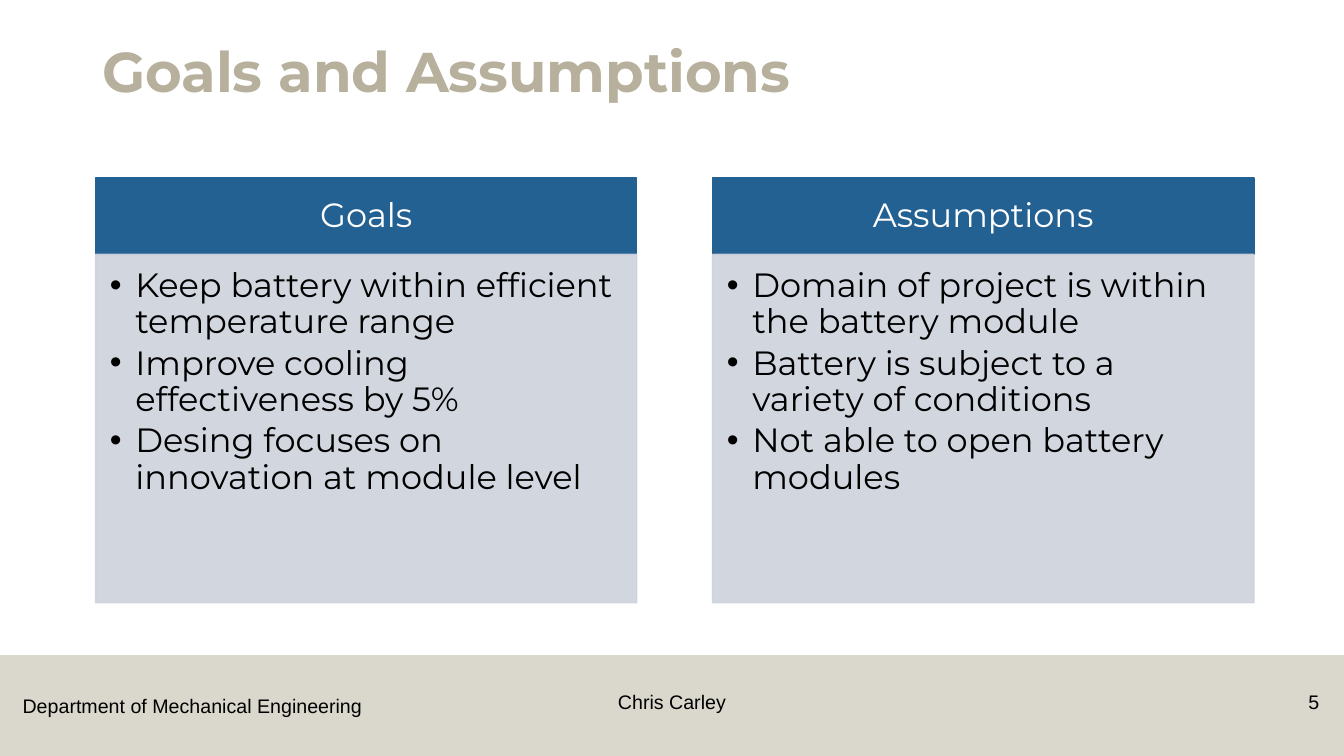
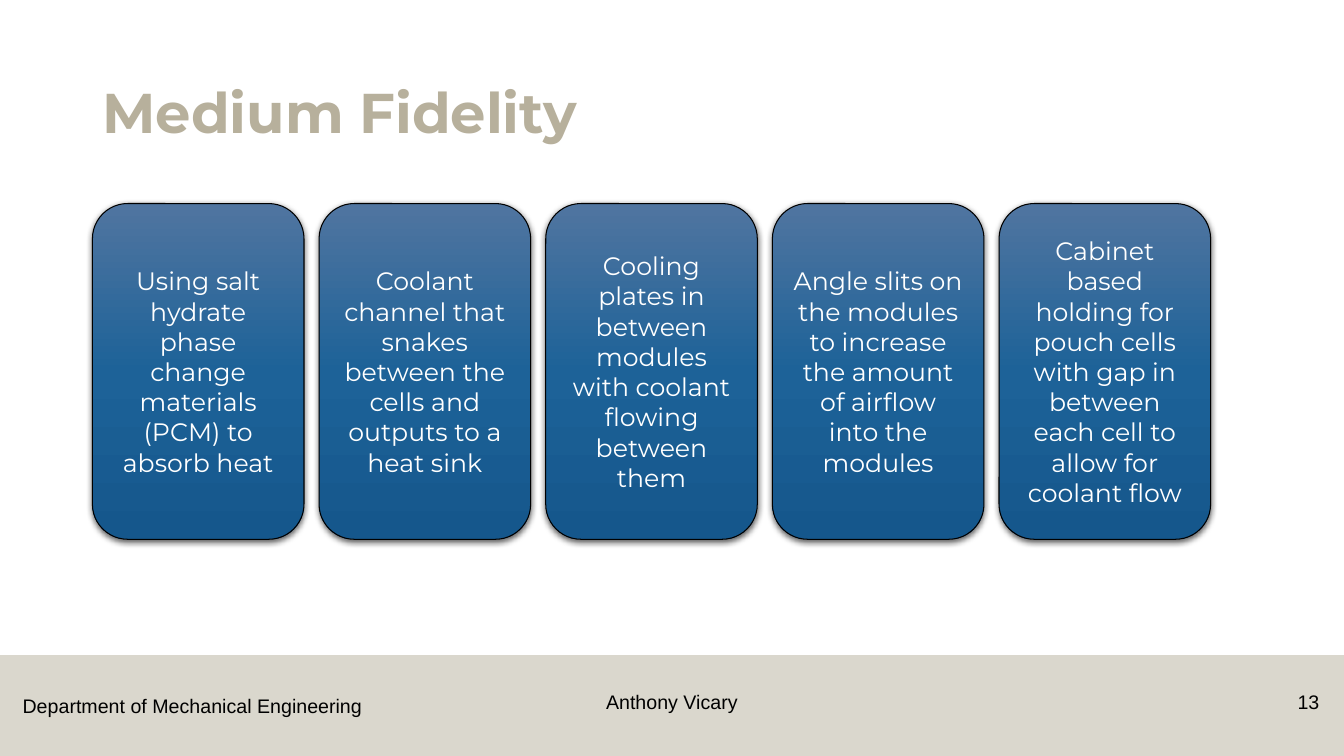
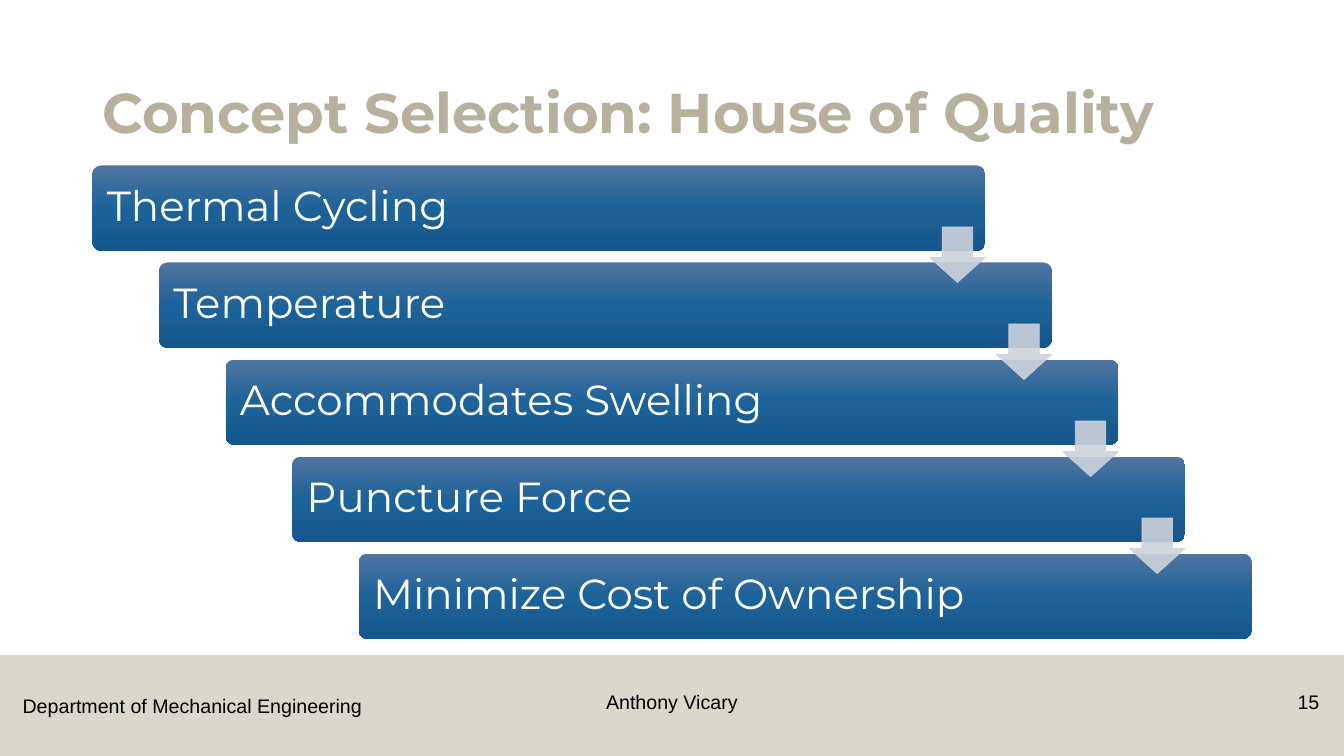
from dataclasses import dataclass
from typing import NamedTuple

from lxml.etree import SubElement
from pptx import Presentation
from pptx.dml.color import RGBColor
from pptx.enum.shapes import MSO_SHAPE as Preset
from pptx.enum.text import MSO_ANCHOR as Anchor, PP_ALIGN as Align
from pptx.oxml.ns import qn
from pptx.util import Cm, Pt


@dataclass(frozen=True)
class Theme:
    heading_font: str = "Montserrat"
    footer_font: str = "Arial"
    sand: str = "B7B09C"
    blue: str = "236192"
    mist: str = "CDD2DC"
    white: str = "FFFFFF"
    black: str = "000000"
    gradient: tuple = ((0, "5075A0"), (50, "1D6298"), (100, "15578C"))
    title_size: int = 40
    step_size: int = 30
    column_size: int = 24
    card_size: int = 18
    footer_size: int = 14


class Box(NamedTuple):
    left: float
    top: float
    width: float
    height: float

    def lengths(self):
        return [Cm(value) for value in self]


THEME = Theme()
SLIDE_WIDTH, SLIDE_HEIGHT = 33.87, 19.05
DEFAULT_INSETS = (0.25, 0.13, 0.25, 0.13)
HEADER_INSETS = (0.48, 0.28, 0.48, 0.28)
BODY_INSETS = (0.36, 0.36, 0.48, 0.53)
STEP_INSETS = (0.3, 0.3, 0.3, 0.3)


def add_bullet(paragraph, indent):
    properties = paragraph._p.get_or_add_pPr()
    properties.set("marL", str(Cm(indent)))
    properties.set("indent", str(-Cm(indent)))
    SubElement(properties, qn("a:buFont"), typeface="Arial")
    SubElement(properties, qn("a:buChar"), char="•")


def write_text(shape, *lines, size, color=THEME.black, font=THEME.heading_font,
               bold=False, align=Align.LEFT, anchor=Anchor.TOP, spacing=1.0,
               after=0, bullet_indent=None, insets=DEFAULT_INSETS, wrap=True):
    frame = shape.text_frame
    frame.word_wrap = wrap
    frame.vertical_anchor = anchor
    (frame.margin_left, frame.margin_top,
     frame.margin_right, frame.margin_bottom) = [Cm(inset) for inset in insets]
    for index, line in enumerate(lines):
        paragraph = frame.add_paragraph() if index else frame.paragraphs[0]
        paragraph.alignment = align
        paragraph.line_spacing = spacing
        paragraph.space_after = Pt(after)
        if bullet_indent:
            add_bullet(paragraph, bullet_indent)
        run = paragraph.add_run()
        run.text = line
        run.font.name = font
        run.font.size = Pt(size)
        run.font.bold = bold
        run.font.color.rgb = RGBColor.from_string(color)


def add_text(slide, box, *lines, **text_format):
    write_text(slide.shapes.add_textbox(*box.lengths()), *lines, **text_format)


def fill_gradient(shape, stops):
    shape.fill.gradient()
    shape.fill.gradient_angle = 270
    stop_list = shape._element.spPr.find(".//" + qn("a:gsLst"))
    for stop in list(stop_list):
        stop_list.remove(stop)
    for position, color in stops:
        stop = SubElement(stop_list, qn("a:gs"), pos=str(position * 1000))
        SubElement(stop, qn("a:srgbClr"), val=color)


def add_shape(slide, preset, box, fill=None, line=None, line_width=1.0,
              opacity=None, adjustments=()):
    shape = slide.shapes.add_shape(preset, *box.lengths())
    shape.shadow.inherit = False
    for index, value in enumerate(adjustments):
        shape.adjustments[index] = value
    if fill:
        shape.fill.solid()
        shape.fill.fore_color.rgb = RGBColor.from_string(fill)
    else:
        fill_gradient(shape, THEME.gradient)
    if line:
        shape.line.color.rgb = RGBColor.from_string(line)
        shape.line.width = Pt(line_width)
    else:
        shape.line.fill.background()
    if opacity:
        for color in list(shape._element.spPr.iter(qn("a:srgbClr"))):
            SubElement(color, qn("a:alpha"), val=str(opacity * 1000))
    return shape


def add_soft_shadow(shape):
    effects = shape._element.spPr.find(qn("a:effectLst"))
    shadow = SubElement(effects, qn("a:outerShdw"), blurRad=str(Pt(4.5)),
                        dist=str(Pt(1.5)), dir="5400000", rotWithShape="0")
    color = SubElement(shadow, qn("a:srgbClr"), val=THEME.black)
    SubElement(color, qn("a:alpha"), val="63000")


def add_footer(slide, box, presenter, number):
    add_shape(slide, Preset.RECTANGLE, box, fill=THEME.sand, opacity=50)
    style = dict(size=THEME.footer_size, font=THEME.footer_font)
    top = box.top + 0.74
    add_text(slide, Box(box.left + 0.32, top + 0.1, 9.12, 0.86),
             "Department of Mechanical Engineering", wrap=False, **style)
    add_text(slide, Box(box.left + (box.width - 11.43) / 2, top, 11.43, 1.02),
             presenter, align=Align.CENTER, **style)
    add_text(slide, Box(box.left + box.width - 2.33, top, 1.96, 1.02),
             str(number), align=Align.RIGHT, **style)


def start_slide(presentation, title, presenter, number, title_top=1.02):
    slide = presentation.slides.add_slide(presentation.slide_layouts[6])
    add_footer(slide, Box(0, 16.51, SLIDE_WIDTH, 2.54), presenter, number)
    add_text(slide, Box(2.33, title_top, 29.21, 2.77), title,
             size=THEME.title_size, color=THEME.sand, bold=True,
             anchor=Anchor.BOTTOM, spacing=0.9)
    return slide


def add_column(slide, box, heading, points, header_height=1.92):
    header = add_shape(slide, Preset.RECTANGLE,
                       box._replace(height=header_height),
                       fill=THEME.blue, line=THEME.blue)
    write_text(header, heading, size=THEME.column_size, color=THEME.white,
               align=Align.CENTER, anchor=Anchor.MIDDLE, spacing=0.9,
               insets=HEADER_INSETS)
    body = add_shape(slide, Preset.RECTANGLE,
                     box._replace(top=box.top + header_height,
                                  height=box.height - header_height),
                     fill=THEME.mist, line=THEME.mist, opacity=90)
    write_text(body, *points, size=THEME.column_size, spacing=0.9, after=3.6,
               bullet_indent=0.64, insets=BODY_INSETS)


def add_columns(slide, box, columns, gap):
    width = (box.width - gap * (len(columns) - 1)) / len(columns)
    for index, (heading, points) in enumerate(columns):
        left = box.left + index * (width + gap)
        add_column(slide, box._replace(left=left, width=width), heading, points)


def add_cards(slide, box, texts, gap):
    width = (box.width - gap * (len(texts) - 1)) / len(texts)
    for index, text in enumerate(texts):
        left = box.left + index * (width + gap)
        card = add_shape(slide, Preset.ROUNDED_RECTANGLE,
                         box._replace(left=left, width=width),
                         line=THEME.black, line_width=0.75)
        add_soft_shadow(card)
        write_text(card, text, size=THEME.card_size, color=THEME.white,
                   align=Align.CENTER, anchor=Anchor.MIDDLE)


def add_staircase(slide, box, steps, bar_width, bar_height, arrow_size=1.4):
    shift = (box.width - bar_width) / (len(steps) - 1)
    drop = (box.height - bar_height) / (len(steps) - 1)
    bars = [Box(box.left + index * shift, box.top + index * drop,
                bar_width, bar_height) for index in range(len(steps))]
    for bar, text in zip(bars, steps):
        shape = add_shape(slide, Preset.ROUNDED_RECTANGLE, bar,
                          adjustments=(0.1,))
        write_text(shape, text, size=THEME.step_size, color=THEME.white,
                   anchor=Anchor.MIDDLE, spacing=0.9, insets=STEP_INSETS)
    for bar in bars[:-1]:
        arrow = Box(bar.left + bar_width - arrow_size, bar.top + 1.55,
                    arrow_size, arrow_size)
        add_shape(slide, Preset.DOWN_ARROW, arrow, fill=THEME.mist,
                  line=THEME.mist, line_width=0.5, opacity=90,
                  adjustments=(0.55, 0.45))


def build_goals(presentation):
    slide = start_slide(presentation, "Goals and Assumptions",
                        "Chris Carley", 5, title_top=0)
    add_columns(slide, Box(2.41, 4.49, 29.19, 10.7), [
        ("Goals", ["Keep battery within efficient temperature range",
                   "Improve cooling effectiveness by 5%",
                   "Desing focuses on innovation at module level"]),
        ("Assumptions", ["Domain of project is within the battery module",
                         "Battery is subject to a variety of conditions",
                         "Not able to open battery modules"]),
    ], gap=1.91)


def build_medium_fidelity(presentation):
    slide = start_slide(presentation, "Medium Fidelity", "Anthony Vicary", 13)
    add_cards(slide, Box(2.33, 5.13, 28.18, 8.46), [
        "Using salt hydrate phase change materials (PCM) to absorb heat",
        "Coolant channel that snakes between the cells and outputs to a "
        "heat sink",
        "Cooling plates in between modules with coolant flowing between them",
        "Angle slits on the modules to increase the amount of airflow into "
        "the modules",
        "Cabinet based holding for pouch cells with gap in between each cell "
        "to allow for coolant flow",
    ], gap=0.38)


def build_concept_selection(presentation):
    slide = start_slide(presentation, "Concept Selection: House of Quality",
                        "Anthony Vicary", 15)
    add_staircase(slide, Box(2.33, 4.17, 29.21, 11.93), [
        "Thermal Cycling", "Temperature", "Accommodates Swelling",
        "Puncture Force", "Minimize Cost of Ownership",
    ], bar_width=22.5, bar_height=2.15)


def main():
    presentation = Presentation()
    presentation.slide_width = Cm(SLIDE_WIDTH)
    presentation.slide_height = Cm(SLIDE_HEIGHT)
    build_goals(presentation)
    build_medium_fidelity(presentation)
    build_concept_selection(presentation)
    presentation.save("out.pptx")


if __name__ == "__main__":
    main()
